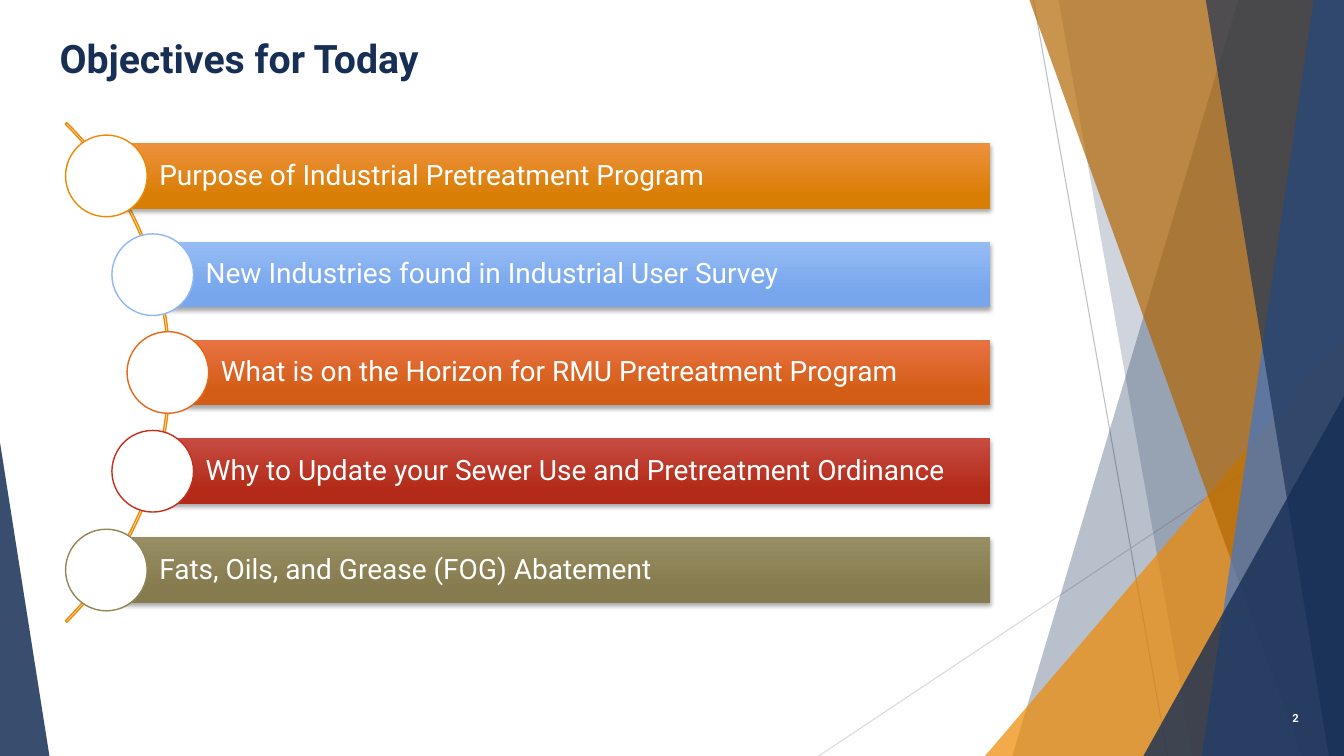
from dataclasses import dataclass

from lxml import etree
from pptx import Presentation
from pptx.dml.color import RGBColor
from pptx.enum.shapes import MSO_CONNECTOR, MSO_SHAPE
from pptx.enum.text import MSO_ANCHOR, MSO_AUTO_SIZE, PP_ALIGN
from pptx.oxml.ns import qn
from pptx.util import Emu, Pt

PX = 9144  # EMU per px, 100 px to the inch
WIDTH, HEIGHT = 1333, 750
FONT = "Roboto"
TITLE_ONLY = 5

STRAIGHT = MSO_CONNECTOR.STRAIGHT
RECTANGLE = MSO_SHAPE.RECTANGLE
OVAL = MSO_SHAPE.OVAL
TRIANGLE = MSO_SHAPE.ISOSCELES_TRIANGLE
BLOCK_ARC = MSO_SHAPE.BLOCK_ARC
TOP, MIDDLE = MSO_ANCHOR.TOP, MSO_ANCHOR.MIDDLE
LEFT, RIGHT = PP_ALIGN.LEFT, PP_ALIGN.RIGHT

COLORS = {
    "white": "FFFFFF",
    "navy": "172F55",
    "orange": "ED8A05",
    "brown": "B26704",
    "blue": "4177CC",
    "gray": "BFBFBF",
    "light gray": "D9D9D9",
}


@dataclass(frozen=True)
class Line:
    start: tuple[int, int]
    end: tuple[int, int]
    color: str


@dataclass(frozen=True)
class Band:
    """A facet reaching the right edge, with a slanted left side."""
    top_x: int
    bottom_x: int
    color: str
    opacity: int


@dataclass(frozen=True)
class Corner:
    """A right triangle standing on the bottom edge."""
    left: int
    top: int
    width: int
    apex: float
    color: str
    opacity: int


@dataclass(frozen=True)
class Objective:
    text: str
    left: int
    light: str
    dark: str
    outline: str


LINES = [
    Line((1025, 0), (1158, HEIGHT), "gray"),
    Line((WIDTH, 403), (812, HEIGHT), "light gray"),
]
FACETS = [
    Band(1228, 1004, "navy", 30),
    Band(1050, 1183, "navy", 20),
    Corner(977, 333, 356, 1, "orange", 72),
    Band(1021, 1291, "brown", 70),
    Band(1303, 1192, "blue", 70),
    Band(1196, 1318, "navy", 65),
    Corner(1134, 393, 199, 1, "navy", 80),
    Corner(0, 439, 49, 0, "navy", 85),
]
OBJECTIVES = [
    Objective("Purpose of Industrial Pretreatment Program", 106, "EE913F", "D97E05", "ED8A05"),
    Objective("New Industries found in Industrial User Survey", 152, "96BCF5", "77A6EC", "8FB8F5"),
    Objective("What is on the Horizon for RMU Pretreatment Program", 167, "E87242", "D35D16", "E76618"),
    Objective("Why to Update your Sewer Use and Pretreatment Ordinance", 152, "C74B42", "B32B18", "C42F1A"),
    Objective("Fats, Oils, and Grease (FOG) Abatement", 106, "988E64", "857B4E", "918655"),
]
BAR_TOP, BAR_STEP, BAR_HEIGHT, BAR_RIGHT = 142, 97.7, 65, 982
CIRCLE = 81


def px(*lengths: int) -> list[Emu]:
    return [Emu(length * PX) for length in lengths]


def rgb(color: str) -> RGBColor:
    return RGBColor.from_string(COLORS.get(color, color))


def set_text(shape, text: str, size: int, color: str, bold: bool, align, anchor) -> None:
    frame = shape.text_frame
    frame.text = text
    frame.word_wrap = True
    frame.auto_size = MSO_AUTO_SIZE.NONE
    frame.vertical_anchor = anchor
    paragraph = frame.paragraphs[0]
    paragraph.alignment = align
    font = paragraph.font
    font.name, font.size, font.bold = FONT, Pt(size), bold
    font.color.rgb = rgb(color)


def draw_line(slide, line: Line) -> None:
    connector = slide.shapes.add_connector(STRAIGHT, *px(*line.start, *line.end))
    connector.line.color.rgb = rgb(line.color)
    connector.line.width = Pt(0.75)
    etree.SubElement(connector._element.spPr, qn("a:effectLst"))


def draw_facet(slide, facet: Band | Corner) -> None:
    if isinstance(facet, Band):
        builder = slide.shapes.build_freeform(*px(facet.top_x, 0))
        corners = [(WIDTH, 0), (WIDTH, HEIGHT), (facet.bottom_x, HEIGHT)]
        builder.add_line_segments([px(*corner) for corner in corners], close=True)
        shape = builder.convert_to_shape()
    else:
        box = px(facet.left, facet.top, facet.width, HEIGHT - facet.top)
        shape = slide.shapes.add_shape(TRIANGLE, *box)
        shape.adjustments[0] = facet.apex
    shape.shadow.inherit = False
    shape.line.fill.background()
    shape.fill.solid()
    shape.fill.fore_color.rgb = rgb(facet.color)
    color = shape._element.spPr.find(".//" + qn("a:srgbClr"))
    etree.SubElement(color, qn("a:alpha"), val=str(facet.opacity * 1000))


def draw_arc(slide) -> None:
    arc = slide.shapes.add_shape(BLOCK_ARC, *px(-532, 19, 701, 701))
    for index, value in enumerate((189, 27, 0.003)):
        arc.adjustments[index] = value
    arc.shadow.inherit = False
    arc.fill.background()
    arc.line.color.rgb = rgb("orange")
    arc.line.width = Pt(1)


def add_bar_shadow(shape) -> None:
    shape.shadow.inherit = False
    effects = shape._element.spPr.find(qn("a:effectLst"))
    shadow = etree.SubElement(effects, qn("a:outerShdw"), blurRad=str(Pt(3)),
                              dist=str(Pt(2)), dir="5400000", rotWithShape="0")
    color = etree.SubElement(shadow, qn("a:srgbClr"), val="000000")
    etree.SubElement(color, qn("a:alpha"), val="35000")


def draw_objective(slide, objective: Objective, top: int) -> None:
    # Bar with its wording
    width = BAR_RIGHT - objective.left
    bar = slide.shapes.add_shape(RECTANGLE, *px(objective.left, top, width, BAR_HEIGHT))
    bar.line.fill.background()
    bar.fill.gradient()
    bar.fill.gradient_angle = 270
    stops = zip(bar.fill.gradient_stops, (0, 0.78), (objective.light, objective.dark))
    for stop, position, color in stops:
        stop.position = position
        stop.color.rgb = rgb(color)
    add_bar_shadow(bar)
    set_text(bar, objective.text, 20, "white", False, LEFT, MIDDLE)
    frame = bar.text_frame
    frame.margin_left, frame.margin_top, frame.margin_right, frame.margin_bottom = px(52, 6, 6, 6)
    frame.paragraphs[0].line_spacing = 0.9

    # Circle centred on the bar's left end
    circle_box = px(objective.left - 41, top - 8, CIRCLE, CIRCLE)
    circle = slide.shapes.add_shape(OVAL, *circle_box)
    circle.shadow.inherit = False
    circle.fill.solid()
    circle.fill.fore_color.rgb = rgb("white")
    circle.line.color.rgb = rgb(objective.outline)
    circle.line.width = Pt(1)


def main() -> None:
    presentation = Presentation()
    presentation.slide_width, presentation.slide_height = px(WIDTH, HEIGHT)
    slide = presentation.slides.add_slide(presentation.slide_layouts[TITLE_ONLY])

    # Background facets
    for line in LINES:
        draw_line(slide, line)
    for facet in FACETS:
        draw_facet(slide, facet)

    # Objectives along the arc
    draw_arc(slide)
    for index, objective in enumerate(OBJECTIVES):
        draw_objective(slide, objective, BAR_TOP + round(BAR_STEP * index))

    # Title and page number
    title = slide.shapes.title
    title.left, title.top, title.width, title.height = px(49, 29, 947, 50)
    set_text(title, "Objectives for Today", 28, "navy", True, LEFT, TOP)
    page_number = slide.shapes.add_textbox(*px(1223, 692, 75, 40))
    set_text(page_number, "2", 8, "white", True, RIGHT, MIDDLE)

    presentation.save("out.pptx")


if __name__ == "__main__":
    main()
